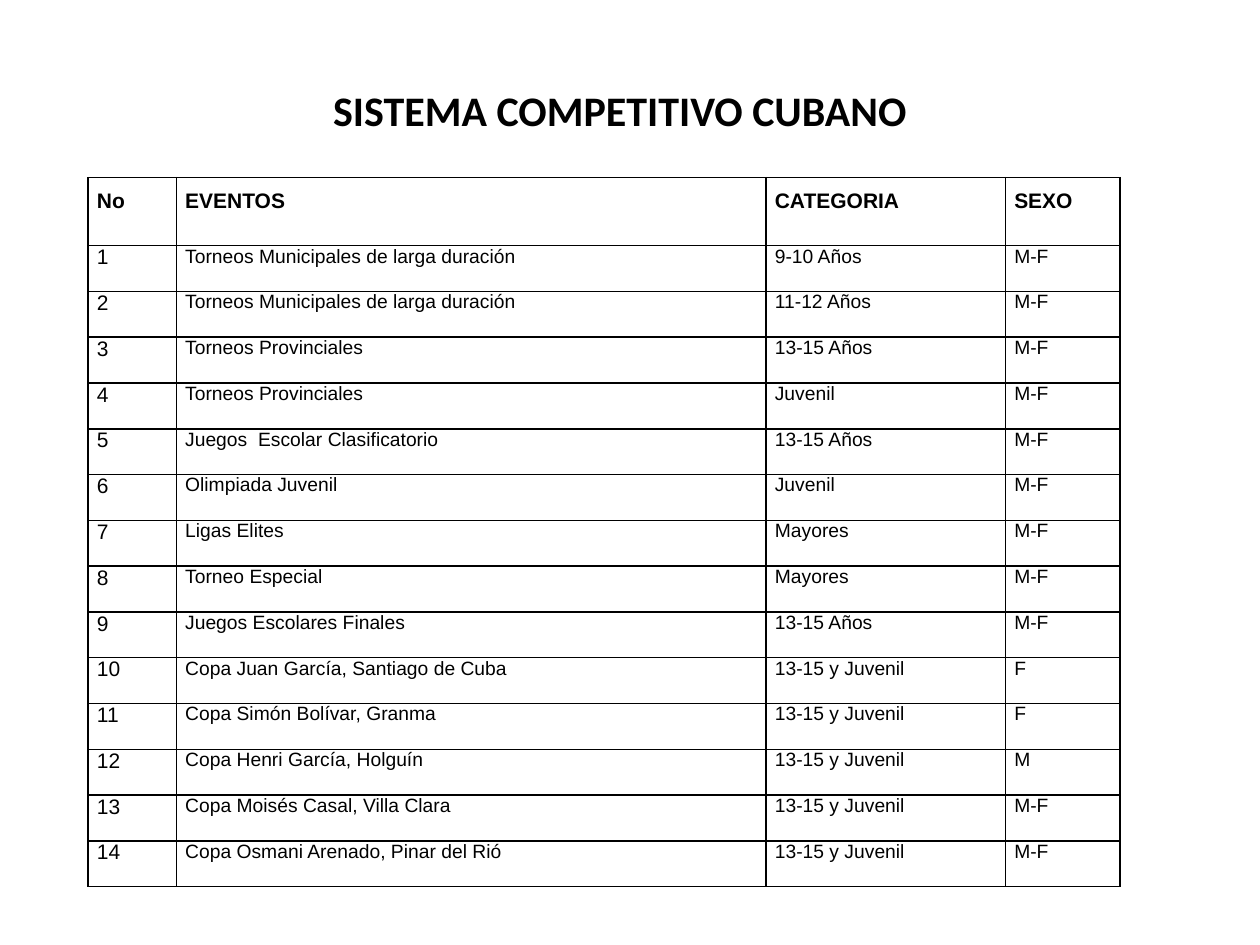
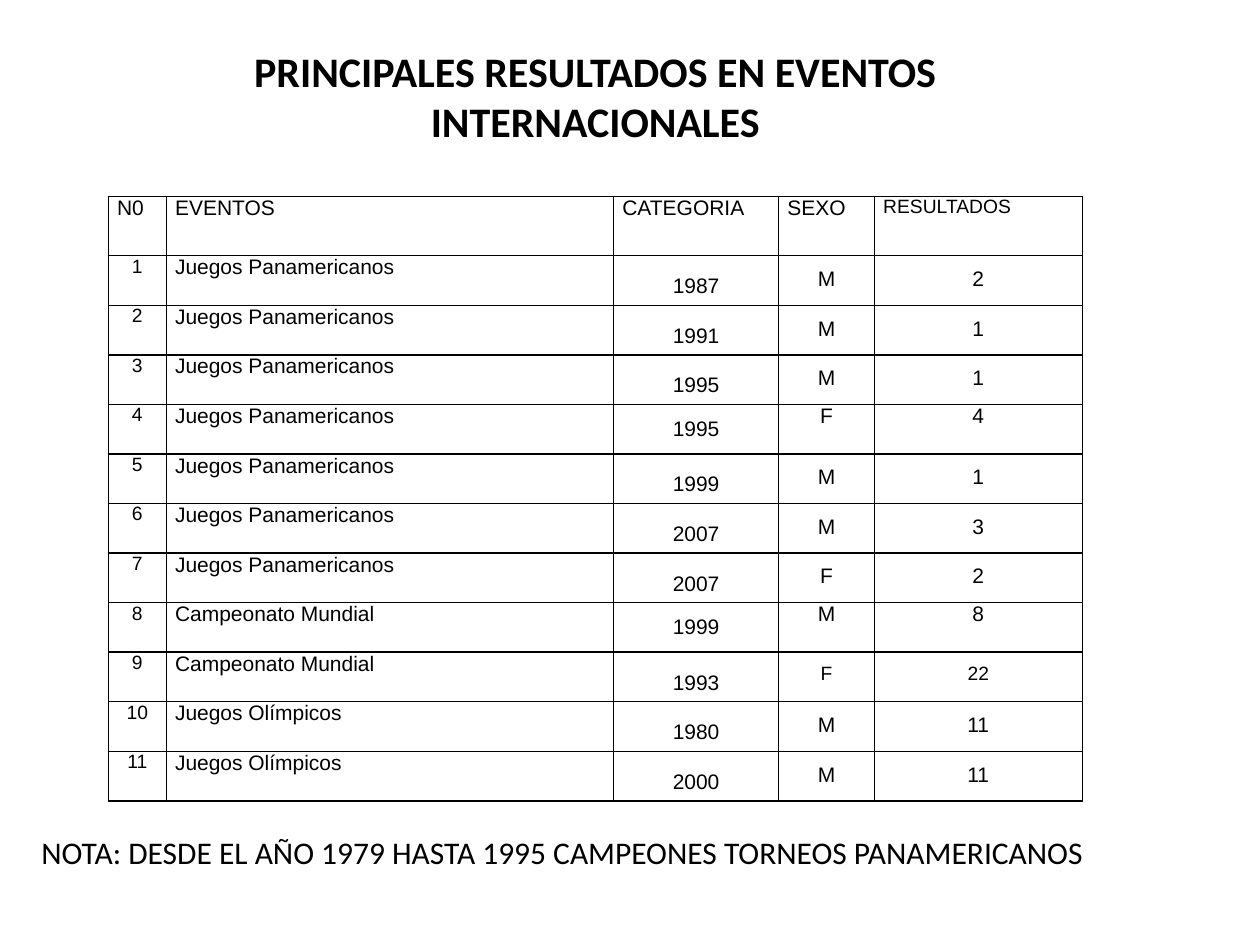
from dataclasses import dataclass

import pptx
import pptx.dml.color
import pptx.enum.text
import pptx.oxml
import pptx.oxml.ns
import pptx.util

Inches = pptx.util.Inches
Pt = pptx.util.Pt
Align = pptx.enum.text.PP_ALIGN
Anchor = pptx.enum.text.MSO_ANCHOR


@dataclass
class Theme:
    ink: str = "000000"
    head: str = "Calibri"
    body: str = "Arial"
    title: int = 24
    note: int = 18
    cell: int = 12
    small: int = 11
    rule: int = 1
    pad: float = 0.07


theme = Theme()


def put(frame, text, size, font=theme.body, bold=False, align=Align.LEFT, space=None):
    frame.word_wrap = True
    para = frame.paragraphs[0]
    para.alignment = align
    para.line_spacing = space
    run = para.add_run()
    run.text = text
    run.font.size = Pt(size)
    run.font.name = font
    run.font.bold = bold
    run.font.color.rgb = pptx.dml.color.RGBColor.from_string(theme.ink)


def grid(slide, left, top, cols, first, high, rows, style):
    """Add a ruled table; style(row, col) gives anchor and text format of a cell."""
    tall = first + high * (len(rows) - 1)
    table = slide.shapes.add_table(
        len(rows), len(cols), Inches(left), Inches(top),
        Inches(sum(cols)), Inches(tall)).table
    table.first_row = table.horz_banding = False
    for col, width in zip(table.columns, cols):
        col.width = Inches(width)
    for r, texts in enumerate(rows):
        table.rows[r].height = Inches(high if r else first)
        for c, text in enumerate(texts):
            cell = table.cell(r, c)
            anchor, form = style(r, c)
            cell.vertical_anchor = anchor
            cell.margin_left = cell.margin_right = Inches(theme.pad)
            cell.margin_top = cell.margin_bottom = 0
            props = cell._tc.get_or_add_tcPr()
            for side in ("lnL", "lnR", "lnT", "lnB"):
                props.append(pptx.oxml.parse_xml(
                    f'<a:{side} {pptx.oxml.ns.nsdecls("a")} w="{Pt(theme.rule)}">'
                    f'<a:solidFill><a:srgbClr val="{theme.ink}"/></a:solidFill>'
                    f'</a:{side}>'))
            cell.fill.background()
            put(cell.text_frame, text, **form)


deck = pptx.Presentation()
deck.slide_width = Inches(10)
deck.slide_height = Inches(7.5)

# Titles
slides = []
for text, *place in (
    ("SISTEMA COMPETITIVO CUBANO", 2.03, 0.62, 5.78, 0.5),
    ("PRINCIPALES RESULTADOS EN EVENTOS INTERNACIONALES", 0.86, 0.31, 7.73, 0.91),
):
    slide = deck.slides.add_slide(deck.slide_layouts[5])
    title = slide.shapes.title
    title.left, title.top, title.width, title.height = map(Inches, place)
    title.text_frame.vertical_anchor = Anchor.TOP
    title.text_frame.auto_size = pptx.enum.text.MSO_AUTO_SIZE.SHAPE_TO_FIT_TEXT
    put(title.text_frame, text, theme.title, theme.head, bold=True, align=Align.CENTER)
    slides.append(slide)
system, results = slides

# Competition system
events = [
    ("Torneos Municipales de larga duración", "9-10 Años", "M-F"),
    ("Torneos Municipales de larga duración", "11-12 Años", "M-F"),
    ("Torneos Provinciales", "13-15 Años", "M-F"),
    ("Torneos Provinciales", "Juvenil", "M-F"),
    ("Juegos  Escolar Clasificatorio", "13-15 Años", "M-F"),
    ("Olimpiada Juvenil", "Juvenil", "M-F"),
    ("Ligas Elites", "Mayores", "M-F"),
    ("Torneo Especial", "Mayores", "M-F"),
    ("Juegos Escolares Finales", "13-15 Años", "M-F"),
    ("Copa Juan García, Santiago de Cuba", "13-15 y Juvenil", "F"),
    ("Copa Simón Bolívar, Granma", "13-15 y Juvenil", "F"),
    ("Copa Henri García, Holguín", "13-15 y Juvenil", "M"),
    ("Copa Moisés Casal, Villa Clara", "13-15 y Juvenil", "M-F"),
    ("Copa Osmani Arenado, Pinar del Rió", "13-15 y Juvenil", "M-F"),
]
rows = [("No", "EVENTOS", "CATEGORIA", "SEXO")]
rows += [(str(n), *event) for n, event in enumerate(events, 1)]


def plain(r, c):
    head = r == 0
    size = theme.cell if head or c == 0 else theme.small
    return Anchor.TOP, dict(size=size, bold=head, align=Align.JUSTIFY,
                            space=1.5 if head else None)


grid(system, 0.7, 1.41, (0.7, 4.68, 1.9, 0.91), 0.54, 5.09 / 14, rows, plain)

# International results
games, world, olympics = "Juegos Panamericanos", "Campeonato Mundial", "Juegos Olímpicos"
places = [
    (games, "1987", "M", "2"),
    (games, "1991", "M", "1"),
    (games, "1995", "M", "1"),
    (games, "1995", "F", "4"),
    (games, "1999", "M", "1"),
    (games, "2007", "M", "3"),
    (games, "2007", "F", "2"),
    (world, "1999", "M", "8"),
    (world, "1993", "F", "22"),
    (olympics, "1980", "M", "11"),
    (olympics, "2000", "M", "11"),
]
rows = [("N0", "EVENTOS", "CATEGORIA", "SEXO", "RESULTADOS")]
rows += [(str(n), *place) for n, place in enumerate(places, 1)]
small = {(0, 4), (9, 3), (9, 4)} | {(r, 0) for r in range(1, len(rows))}
tight = (0, 4, 8)


def mixed(r, c):
    left = r == 0 or c == 1
    anchor = Anchor.MIDDLE if r and c == 2 else Anchor.TOP
    return anchor, dict(
        size=theme.small if (r, c) in small else theme.cell,
        align=Align.JUSTIFY if left else Align.CENTER,
        space=1.5 if c > 1 and r not in tight else None)


grid(results, 0.86, 1.56, (0.46, 3.55, 1.31, 0.76, 1.65), 0.47, 4.33 / 11, rows, mixed)

note = results.shapes.add_textbox(Inches(0.23), Inches(6.56), Inches(8.75), Inches(0.4))
put(note.text_frame, "NOTA: DESDE EL AÑO 1979 HASTA 1995 CAMPEONES TORNEOS PANAMERICANOS",
    theme.note, theme.head)

deck.save("out.pptx")
